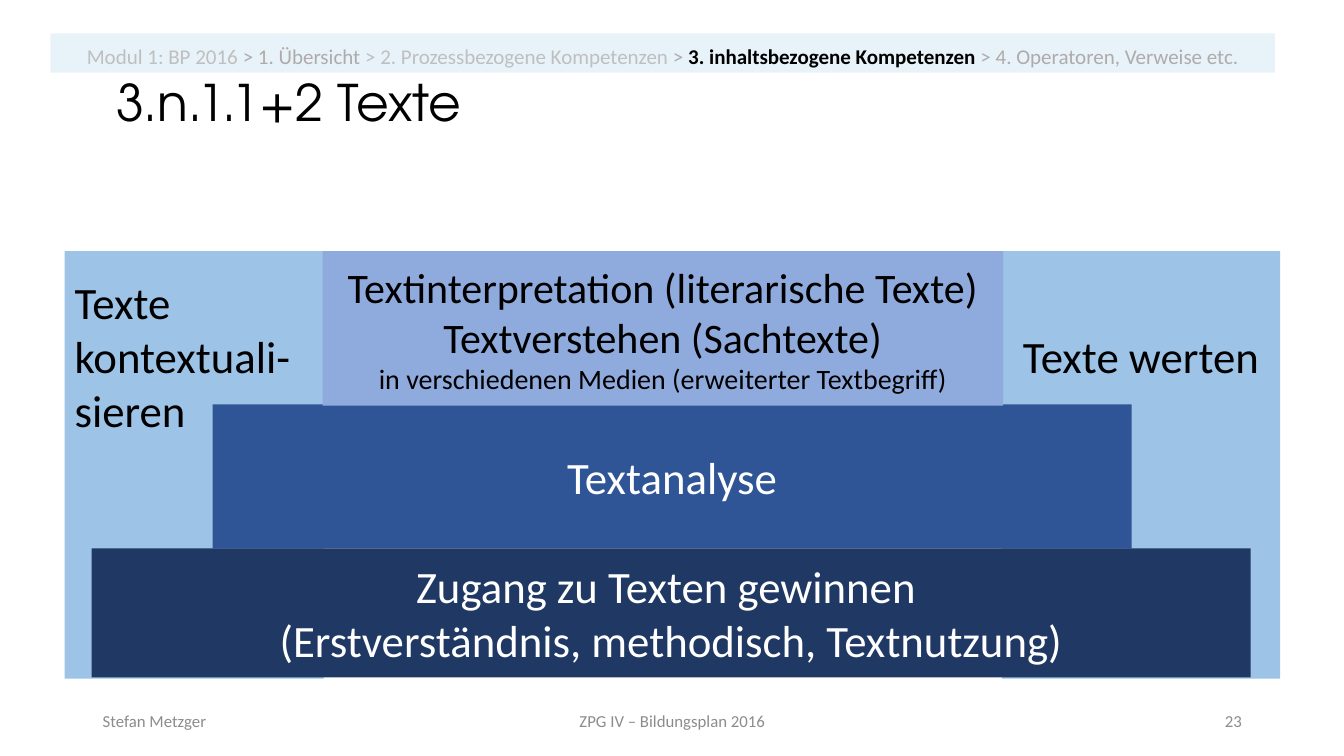
from pptx import Presentation
from pptx.dml.color import RGBColor
from pptx.enum.shapes import MSO_SHAPE
from pptx.enum.text import MSO_ANCHOR, MSO_AUTO_SIZE, PP_ALIGN
from pptx.oxml.ns import qn
from pptx.util import Cm, Pt
from lxml.etree import SubElement


def rgb(value):
    return RGBColor.from_string(value)


class Deck:
    """Holds the style and the current slide and adds its elements."""

    font = "Calibri"
    heading_font = "TeX Gyre Adventor"
    black, white, grey = "000000", "FFFFFF", "8C8C8C"

    def __init__(self, slide):
        self.s = slide

    def style(self, p, size, color, align, font=None):
        p.alignment = align
        p.font.size = Pt(size)
        p.font.name = font or self.font
        p.font.color.rgb = rgb(color)

    def title(self, text, x, y, w, h):
        sp = self.s.shapes.title
        sp.left, sp.top, sp.width, sp.height = Cm(x), Cm(y), Cm(w), Cm(h)
        tf = sp.text_frame
        tf.text = text
        tf.vertical_anchor = MSO_ANCHOR.TOP
        tf.auto_size = MSO_AUTO_SIZE.NONE
        p = tf.paragraphs[0]
        p.line_spacing = 0.9
        self.style(p, 36, self.black, PP_ALIGN.LEFT, self.heading_font)

    def block(self, x, y, w, h, fill, lines=(), color=black, align=PP_ALIGN.CENTER):
        sp = self.s.shapes.add_shape(MSO_SHAPE.RECTANGLE, Cm(x), Cm(y), Cm(w), Cm(h))
        sp.shadow.inherit = False
        sp.fill.solid()
        sp.fill.fore_color.rgb = rgb(fill)
        sp.line.fill.background()
        tf = sp.text_frame
        tf.word_wrap = True
        tf.vertical_anchor = MSO_ANCHOR.MIDDLE
        for i, (text, size) in enumerate(lines):
            p = tf.add_paragraph() if i else tf.paragraphs[0]
            p.text = text
            self.style(p, size, color, align)
        return sp

    def side_panel(self, text, x, w, align):
        sp = self.block(x, 6.33, w, 10.77, "9DC3E6", [(text, 32)], align=align)
        sp.text_frame.margin_bottom = Cm(5.64)

    def breadcrumb(self, parts, x, y, w, h):
        sp = self.block(x, y, w, h, "0070C0")
        color = sp.fill._xPr.find(qn("a:solidFill"))[0]
        SubElement(color, qn("a:alpha"), val="9000")
        tf = sp.text_frame
        tf.vertical_anchor = MSO_ANCHOR.BOTTOM
        p = tf.paragraphs[0]
        p.line_spacing = 0.7
        self.style(p, 15, self.black, PP_ALIGN.CENTER)
        for text, color in parts:
            r = p.add_run()
            r.text = text
            r.font.color.rgb = rgb(color)
            r.font.bold = color == self.black

    def footer(self, text, x, w, align):
        sp = self.s.shapes.add_textbox(Cm(x), Cm(17.65), Cm(w), Cm(1.02))
        tf = sp.text_frame
        tf.word_wrap = True
        tf.vertical_anchor = MSO_ANCHOR.MIDDLE
        tf.text = text
        self.style(tf.paragraphs[0], 12, self.grey, align)


def main():
    prs = Presentation()
    prs.slide_width, prs.slide_height = Cm(33.87), Cm(19.05)
    deck = Deck(prs.slides.add_slide(prs.slide_layouts[5]))

    deck.side_panel("Texte werten", 25.25, 7.01, PP_ALIGN.CENTER)
    deck.side_panel("Texte kontextuali-sieren", 1.63, 6.53, PP_ALIGN.LEFT)
    deck.title("3.n.1.1+2 Texte", 2.67, 1.83, 29.21, 2.31)
    deck.block(5.36, 10.19, 23.16, 3.63, "2F5597", [("Textanalyse", 32)], deck.white)
    deck.block(8.13, 6.33, 17.15, 3.89, "8FAADC", [
        ("Textinterpretation (literarische Texte) Textverstehen (Sachtexte)", 30),
        ("in verschiedenen Medien (erweiterter Textbegriff)", 20),
    ])
    deck.footer("Stefan Metzger", 2.34, 7.62, PP_ALIGN.LEFT)
    deck.footer("ZPG IV – Bildungsplan 2016", 11.23, 11.43, PP_ALIGN.CENTER)
    deck.footer("23", 23.93, 7.62, PP_ALIGN.RIGHT)
    deck.breadcrumb([
        ("Modul 1: BP 2016 ", "BFBFBF"),
        ("> 1. Übersicht ", "AFABAB"),
        ("> 2. Prozessbezogene Kompetenzen ", "BFBFBF"),
        ("> ", "AFABAB"),
        ("3. inhaltsbezogene Kompetenzen ", deck.black),
        ("> 4. Operatoren, Verweise etc.", "AFABAB"),
    ], 1.27, 0.84, 30.86, 0.99)
    access = "Zugang zu Texten gewinnen \n(Erstverständnis, methodisch, Textnutzung)"
    deck.block(2.31, 13.82, 29.21, 3.25, "203864", [(access, 32)], deck.white)

    prs.save("out.pptx")


if __name__ == "__main__":
    main()
